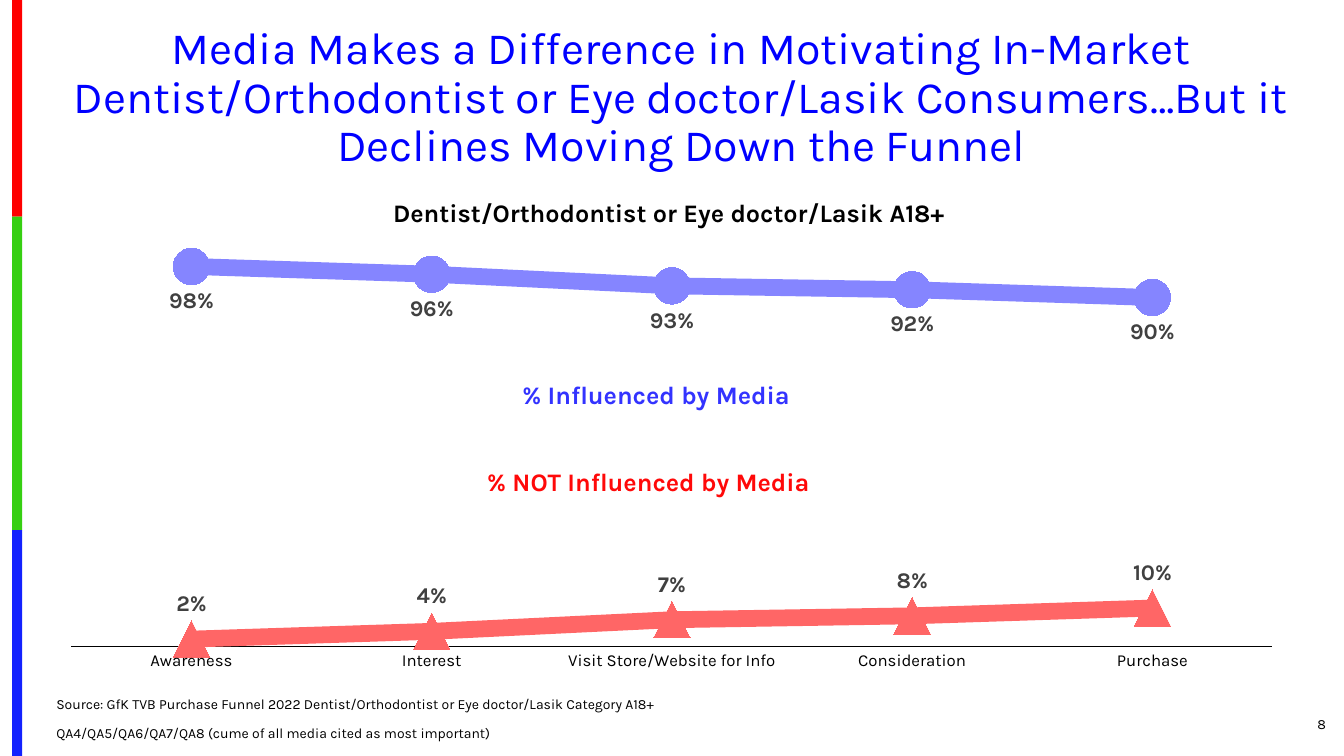
from lxml import etree
from pptx import Presentation
from pptx.chart.data import CategoryChartData
from pptx.dml.color import RGBColor
from pptx.enum.chart import XL_CHART_TYPE, XL_LABEL_POSITION as LabelPos
from pptx.enum.chart import XL_MARKER_STYLE as Marker, XL_TICK_MARK as Tick
from pptx.enum.shapes import MSO_SHAPE
from pptx.enum.text import MSO_ANCHOR as Anchor, PP_ALIGN as Align
from pptx.oxml.ns import qn
from pptx.util import Inches, Pt

FONT = "Karla"
BLACK = RGBColor(0x00, 0x00, 0x00)
GREY = RGBColor(0x40, 0x40, 0x40)
TITLE_BLUE = RGBColor(0x00, 0x00, 0xFF)
BLUE = RGBColor(0x33, 0x33, 0xFF)
RED = RGBColor(0xFF, 0x09, 0x09)
LIGHT_BLUE = RGBColor(0x85, 0x85, 0xFF)
LIGHT_RED = RGBColor(0xFF, 0x66, 0x66)
BAR_RED = RGBColor(0xFE, 0x00, 0x00)
BAR_GREEN = RGBColor(0x36, 0xCF, 0x12)
BAR_BLUE = RGBColor(0x13, 0x22, 0xFE)

prs = Presentation()
prs.slide_width, prs.slide_height = Inches(13.33), Inches(7.5)
s = prs.slides.add_slide(prs.slide_layouts[6])


def set_font(font, size, color, bold=False):
    font.name, font.size, font.bold = FONT, Pt(size), bold
    font.color.rgb = color


def add_text(box, lines, size, color, bold=False, align=Align.LEFT,
             anchor=Anchor.TOP, spacing=1.0, before=0):
    """Add a text box with one paragraph per line; before is the gap between them."""
    tf = s.shapes.add_textbox(*map(Inches, box)).text_frame
    tf.word_wrap, tf.vertical_anchor = True, anchor
    for i, line in enumerate(lines):
        p = tf.add_paragraph() if i else tf.paragraphs[0]
        p.alignment, p.line_spacing = align, spacing
        if i:
            p.space_before = Pt(before)
        r = p.add_run()
        r.text = line
        set_font(r.font, size, color, bold)


# Coloured strip down the left edge
edges = [0, 2.15, 5.26, 7.5]
for top, bottom, color in zip(edges, edges[1:], [BAR_RED, BAR_GREEN, BAR_BLUE]):
    sp = s.shapes.add_shape(MSO_SHAPE.RECTANGLE, Inches(0.12), Inches(top),
                            Inches(0.1), Inches(bottom - top))
    sp.shadow.inherit = False
    sp.fill.solid()
    sp.fill.fore_color.rgb = color
    sp.line.fill.background()

add_text((0.19, 0.21, 13.14, 1.56),
         ["Media Makes a Difference in Motivating In-Market Dentist/Orthodontist or "
          "Eye doctor/Lasik Consumers…But it Declines Moving Down the Funnel"],
         32, TITLE_BLUE, align=Align.CENTER, spacing=0.9)
add_text((12.17, 6.98, 1.08, 0.4), ["8"], 10, BLACK,
         align=Align.RIGHT, anchor=Anchor.MIDDLE)
add_text((0.46, 6.87, 9.45, 0.54),
         ["Source: GfK TVB Purchase Funnel 2022 Dentist/Orthodontist or "
          "Eye doctor/Lasik Category A18+",
          "QA4/QA5/QA6/QA7/QA8 (cume of all media cited as most important)"],
         10, BLACK, anchor=Anchor.BOTTOM, spacing=0.9, before=10)

# Funnel chart
data = CategoryChartData(number_format="0%")
data.categories = ["Awareness", "Interest", "Visit Store/Website for Info",
                   "Consideration", "Purchase"]
data.add_series("Series 1", [0.98, 0.96, 0.93, 0.92, 0.9])
data.add_series("Series 2", [0.02, 0.04, 0.07, 0.08, 0.1])
chart = s.shapes.add_chart(XL_CHART_TYPE.LINE_MARKERS, Inches(0.46), Inches(2.46),
                           Inches(12.41), Inches(4.28), data).chart
chart.has_legend = chart.has_title = False
set_font(chart.font, 10, BLACK)

stages = chart.category_axis
stages.major_tick_mark = stages.minor_tick_mark = Tick.NONE
stages.has_major_gridlines = False
set_font(stages.tick_labels.font, 12, BLACK)
stages.format.line.color.rgb = BLACK
stages.format.line.width = Pt(0.75)
shares = chart.value_axis
shares.minimum_scale, shares.maximum_scale = 0, 1
shares.has_major_gridlines = shares.visible = False

plot = chart.plots[0]
plot.vary_by_categories = False
styles = [(LIGHT_BLUE, Marker.CIRCLE, LabelPos.BELOW),
          (LIGHT_RED, Marker.TRIANGLE, LabelPos.ABOVE)]
for series, (color, marker, position) in zip(plot.series, styles):
    series.smooth = False
    series.format.line.color.rgb = color
    series.format.line.width = Pt(12)
    series.marker.style, series.marker.size = marker, 26
    series.marker.format.fill.solid()
    series.marker.format.fill.fore_color.rgb = color
    series.marker.format.line.fill.background()
    labels = series.data_labels
    labels.show_value, labels.position = True, position
    labels.number_format, labels.number_format_is_linked = "0%", False
    set_font(labels.font, 16, GREY, bold=True)

# Fixed inner plot area, as shares of the chart frame
area = chart.element.find(".//" + qn("c:plotArea"))
for old in area.findall(qn("c:layout")):
    area.remove(old)
layout = etree.Element(qn("c:layout"))
area.insert(0, layout)
manual = etree.SubElement(layout, qn("c:manualLayout"))
for tag, value in [("layoutTarget", "inner"), ("xMode", "edge"), ("yMode", "edge"),
                   ("x", "0.02"), ("y", "0.025"), ("w", "0.96"), ("h", "0.9")]:
    etree.SubElement(manual, qn("c:" + tag)).set("val", value)

# Captions over the chart
for box, caption, color in [
        ((5.08, 3.71, 3.17, 0.4), "% Influenced by Media", BLUE),
        ((4.73, 4.58, 3.78, 0.4), "% NOT Influenced by Media", RED),
        ((3.8, 1.91, 6.21, 0.4), "Dentist/Orthodontist or Eye doctor/Lasik A18+", BLACK)]:
    add_text(box, [caption], 18, color, bold=True)

prs.save("out.pptx")
